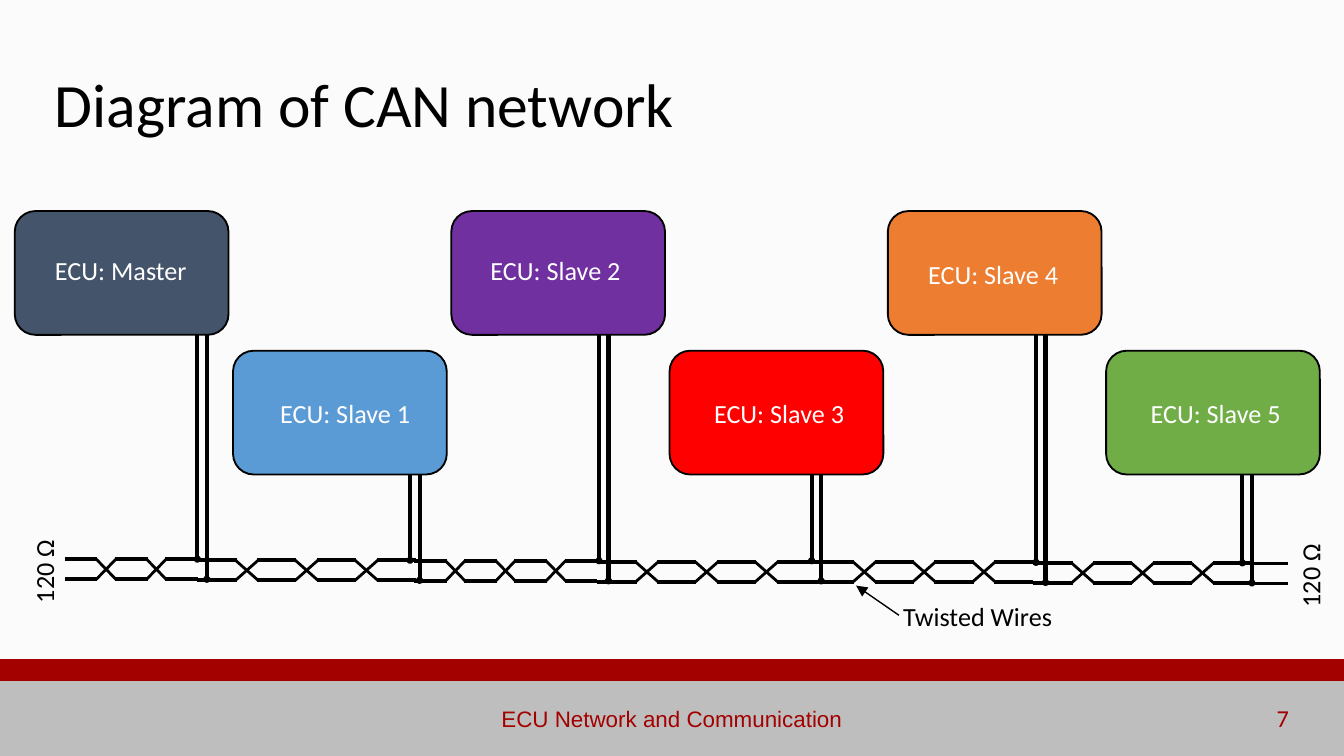
from dataclasses import dataclass

import pptx
import pptx.dml.color
import pptx.enum.shapes
import pptx.enum.text
import pptx.oxml
import pptx.oxml.ns
import pptx.util

Cm = pptx.util.Cm
Align = pptx.enum.text.PP_ALIGN
Anchor = pptx.enum.text.MSO_ANCHOR
Preset = pptx.enum.shapes.MSO_SHAPE


@dataclass(frozen=True)
class Theme:
    """Colours, fonts and type sizes of the slide."""
    background: str = "FBFBFB"
    ink: str = "000000"
    white: str = "FFFFFF"
    red: str = "A30000"
    gray: str = "BEBEBE"
    font: str = "Calibri"
    footer_font: str = "Arial"
    title: int = 33
    label: int = 14
    footer: int = 12
    number: int = 13
    straight_wire: float = 2
    crossed_wire: float = 1.5
    drop_wire: float = 2.25
    pointer: float = 0.75


@dataclass(frozen=True)
class Box:
    """A rectangle in centimetres."""
    left: float
    top: float
    width: float
    height: float

    def inner(self, x, y, width, height):
        """Return a box offset from this one."""
        return Box(self.left + x, self.top + y, width, height)

    def lengths(self):
        """Return left, top, width and height as slide lengths."""
        return Cm(self.left), Cm(self.top), Cm(self.width), Cm(self.height)


THEME = Theme()
WIRE_GAP = 0.38
TAP_GAP = 0.18
OVERLAP = 0.02
SHORT_TWIST = (0.95, 0.62)
LONG_TWIST = (1.13, 0.74)

BUS_SECTIONS = [
    (0, 0, 3, SHORT_TWIST),
    (2.51, 0.02, 4, LONG_TWIST),
    (6.6, 0.03, 4, SHORT_TWIST),
    (10.07, 0.05, 4, LONG_TWIST),
    (14.18, 0.05, 4, LONG_TWIST),
    (18.31, 0.07, 4, LONG_TWIST),
    (22.38, 0.08, 1, LONG_TWIST),
]

ECUS = [
    ("ECU: Master", "44546A", (0.58, 0.71), (3.73, 10.57)),
    ("ECU: Slave 1", "5B9BD5", (0.71, 0.79), (7.75, 10.59)),
    ("ECU: Slave 2", "7030A0", (0.56, 0.71), (11.32, 10.6)),
    ("ECU: Slave 3", "FF0000", (0.66, 0.79), (15.34, 10.6)),
    ("ECU: Slave 4", "ED7D31", (0.58, 0.79), (19.58, 10.63)),
    ("ECU: Slave 5", "70AD47", (0.66, 0.79), (23.48, 10.64)),
]


def color(value):
    """Turn a hex string into a colour."""
    return pptx.dml.color.RGBColor.from_string(value)


def add_line(slide, start, end, weight):
    """Draw a black line between two points and return it."""
    line = slide.shapes.add_connector(
        pptx.enum.shapes.MSO_CONNECTOR.STRAIGHT, *(Cm(value) for value in (*start, *end)))
    line.line.color.rgb = color(THEME.ink)
    line.line.width = pptx.util.Pt(weight)
    pptx.oxml.ns.qn("a:effectLst")
    line.element.spPr.append(line.element.spPr.makeelement(pptx.oxml.ns.qn("a:effectLst"), {}))
    return line


def add_filled(slide, preset, box, fill, outlined=True):
    """Draw a filled preset shape, with a thin black outline if wanted."""
    shape = slide.shapes.add_shape(preset, *box.lengths())
    shape.shadow.inherit = False
    shape.fill.solid()
    shape.fill.fore_color.rgb = color(fill)
    if outlined:
        shape.line.color.rgb = color(THEME.ink)
        shape.line.width = pptx.util.Pt(1)
    else:
        shape.line.fill.background()
    return shape


def add_text(slide, box, text, size, ink, font=THEME.font, align=Align.LEFT,
             anchor=Anchor.TOP, insets=(0.18, 0.1)):
    """Place one line of text in a box and return the text box."""
    text_box = slide.shapes.add_textbox(*box.lengths())
    frame = text_box.text_frame
    frame.text = text
    frame.word_wrap = True
    frame.vertical_anchor = anchor
    frame.margin_left = frame.margin_right = Cm(insets[0])
    frame.margin_top = frame.margin_bottom = Cm(insets[1])
    paragraph = frame.paragraphs[0]
    paragraph.alignment = align
    paragraph.font.size = pptx.util.Pt(size)
    paragraph.font.name = font
    paragraph.font.color.rgb = color(ink)
    return text_box


def add_title(slide, box, text):
    """Place the slide title."""
    title = add_text(slide, box, text, THEME.title, THEME.ink,
                     anchor=Anchor.MIDDLE, insets=(0.18, 0.18))
    title.text_frame.paragraphs[0].line_spacing = 0.9


def add_footer(slide, box, text, number):
    """Draw the footer bands with their text and the slide number."""
    stripe = 0.41
    add_filled(slide, Preset.RECTANGLE,
               box.inner(0, stripe, box.width, box.height - stripe), THEME.gray, False)
    add_filled(slide, Preset.RECTANGLE, box.inner(0, 0, box.width, stripe), THEME.red, False)
    add_text(slide, box.inner(8.46, 0.75, 8.48, 0.76), text, THEME.footer, THEME.red,
             THEME.footer_font, Align.CENTER, Anchor.MIDDLE, (0.25, 0.25))
    add_text(slide, box.inner(23.09, 0.59, 1.52, 1.09), number, THEME.number, THEME.red,
             align=Align.RIGHT, insets=(0.25, 0.25))


def add_bus_section(slide, box, count, twist):
    """Draw pairs of straight wires joined by crossings."""
    pitch, straight = twist
    top, bottom = box.top, box.top + box.height
    for index in range(count):
        left = box.left + index * pitch
        right = left + straight
        for y in (top, bottom):
            add_line(slide, (left, y), (right, y), THEME.straight_wire)
        if index < count - 1:
            for start, end in ((top, bottom), (bottom, top)):
                add_line(slide, (right - OVERLAP, start),
                         (left + pitch + OVERLAP, end), THEME.crossed_wire)


def add_bus(slide, box):
    """Draw the twisted pair, its end resistances and its pointer label."""
    for x, y, count, twist in BUS_SECTIONS:
        add_bus_section(slide, box.inner(x, y, box.width, WIRE_GAP), count, twist)
    for x, y in ((-1.25, -0.21), (22.68, -0.13)):
        resistance = add_text(slide, box.inner(x, y, 1.68, 0.76), "120 Ω",
                              THEME.label, THEME.ink)
        resistance.rotation = 270
    add_text(slide, box.inner(15.67, 0.68, 3.38, 0.76), "Twisted Wires",
             THEME.label, THEME.ink)
    pointer = add_line(slide, (box.left + 15.77, box.top + 1.06),
                       (box.left + 14.96, box.top + 0.5), THEME.pointer)
    outline = pointer.line._get_or_add_ln()
    outline.append(outline.makeelement(pptx.oxml.ns.qn("a:tailEnd"), {"type": "triangle"}))


def add_ecu(slide, box, name, fill, label_offset, tap):
    """Draw a control unit with two wires dropping to the bus."""
    dot = 0.1
    for step in range(2):
        x, y = tap[0] + step * TAP_GAP, tap[1] + step * WIRE_GAP
        add_line(slide, (x, y), (x, box.top + box.height), THEME.drop_wire)
        add_filled(slide, Preset.OVAL, Box(x - dot / 2, y - dot / 2, dot, dot), THEME.ink)
    add_filled(slide, Preset.ROUNDED_RECTANGLE, box, fill)
    add_text(slide, box.inner(*label_offset, 3.2, 0.76), name, THEME.label, THEME.white)


def add_network(slide, box):
    """Draw the control units in two staggered rows above the bus."""
    add_bus(slide, box.inner(0.94, 6.58, 23.12, WIRE_GAP))
    for index, ecu in enumerate(ECUS):
        add_ecu(slide, box.inner(index * 4.125, index % 2 * 2.64, 4.04, 2.34), *ecu)


def main():
    """Build and save the slide."""
    presentation = pptx.Presentation()
    presentation.slide_width, presentation.slide_height = Cm(25.4), Cm(14.29)
    slide = presentation.slides.add_slide(presentation.slide_layouts[6])
    slide.background.fill.solid()
    slide.background.fill.fore_color.rgb = color(THEME.background)
    add_footer(slide, Box(0, 12.46, 25.4, 1.83), "ECU Network and Communication", "7")
    add_network(slide, Box(0.28, 3.99, 24.67, 7.1))
    add_title(slide, Box(0.86, 1.24, 23.67, 1.6), "Diagram of CAN network")
    presentation.save("out.pptx")


if __name__ == "__main__":
    main()
